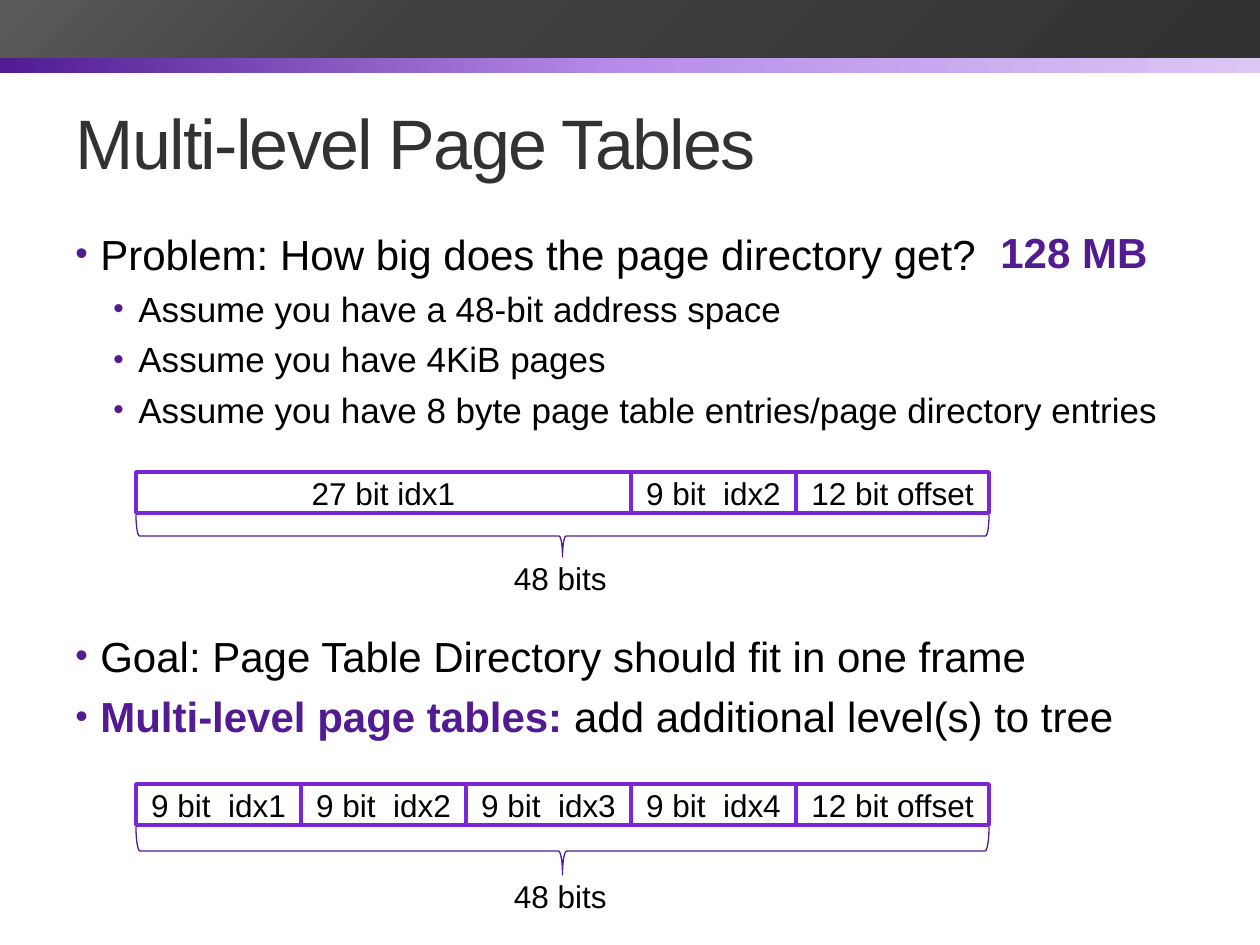
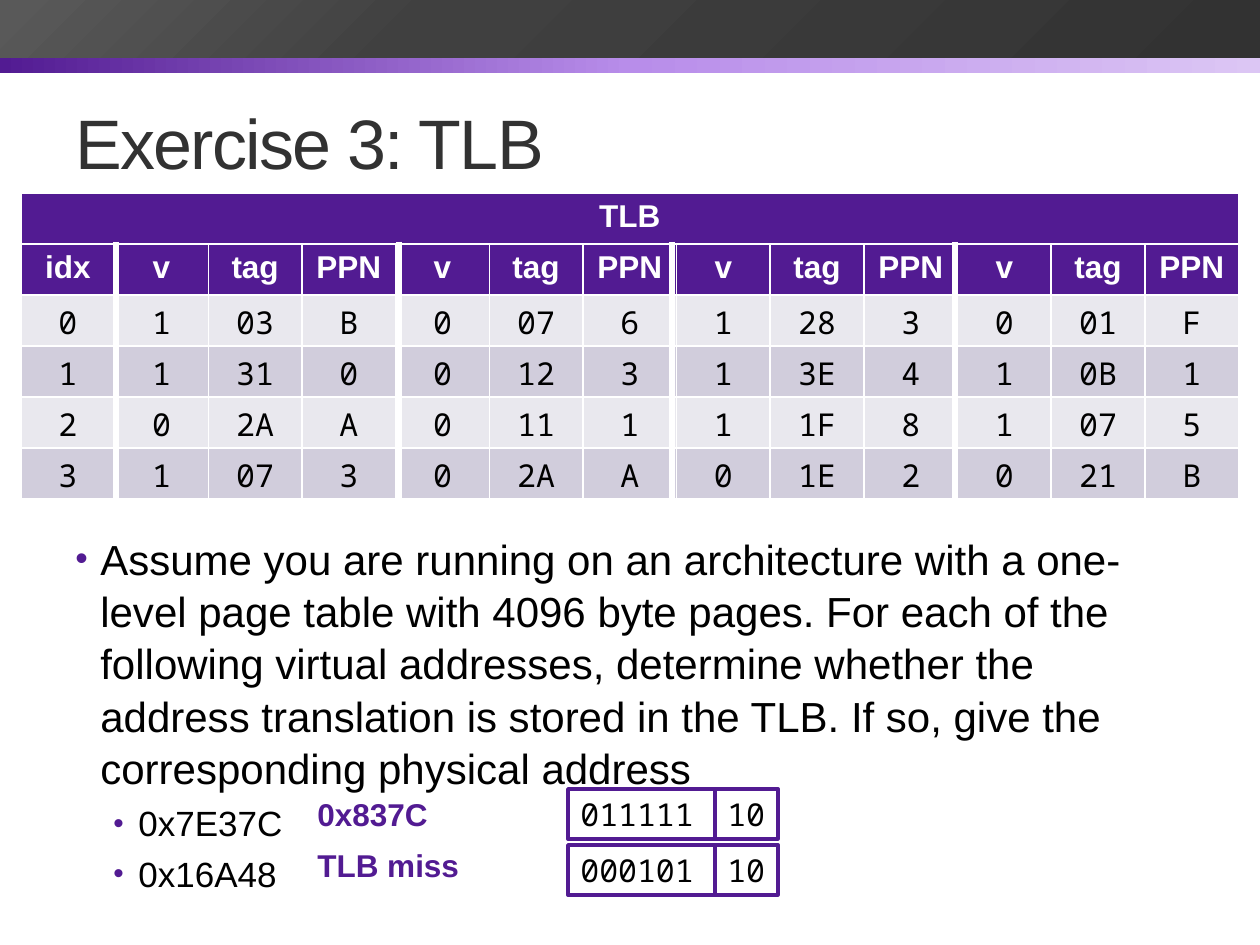
from lxml import etree
from pptx import Presentation
from pptx import util as u
from pptx.dml.color import RGBColor
from pptx.enum import shapes, text
from pptx.oxml import ns

SCALE = 914400 / 126  # EMU per px
FONT, MONO = "Arial", "Noto Sans Mono"
COLORS = {
    "purple": "521B92", "violet": "7A27D8", "title": "323232",
    "text": "000000", "white": "FFFFFF", "row_light": "E9E8EE", "row_dark": "D1CDDC",
}
PURPLE_BAND = [(0, "521B92"), (50, "B88DEA"), (100, "DCC6F4")]
GRAY_BAND = [(0, "323232"), (66, "404040"), (99, "595959")]
BIT_WIDTHS = {"27 bit": 495, "9 bit": 165, "12 bit": 193}
SIZES, INDENTS, HANG = (24, 20), (25, 63), 25  # by bullet level


def px(n):
    return u.Emu(round(n * SCALE))


def box_px(*values):
    return [px(v) for v in values]


def rgb(name):
    return RGBColor.from_string(COLORS[name])


def sub(parent, tag, **attrs):
    return etree.SubElement(parent, ns.qn(tag), attrs)


def style(r, size, color="text", bold=False, font=FONT):
    r.font.size, r.font.bold, r.font.name = u.Pt(size), bold, font
    r.font.color.rgb = rgb(color)


def add_shape(s, kind, box, fill=None, line=None, width=2.08):
    sp = s.shapes.add_shape(kind, *box_px(*box))
    sp.shadow.inherit = False
    if fill:
        sp.fill.solid()
        sp.fill.fore_color.rgb = rgb(fill)
    else:
        sp.fill.background()
    if line:
        sp.line.color.rgb = rgb(line)
        sp.line.width = u.Pt(width)
    else:
        sp.line.fill.background()
    return sp


def add_cell(s, label, box, line, align, font=FONT):
    """White outlined box with one line of text."""
    sp = add_shape(s, shapes.MSO_SHAPE.RECTANGLE, box, "white", line)
    tf = sp.text_frame
    tf.text = label
    tf.word_wrap = False
    tf.vertical_anchor = text.MSO_ANCHOR.MIDDLE
    p = tf.paragraphs[0]
    p.alignment = align
    style(p.runs[0], 18, font=font)


def add_label(s, label, box, size=18, color="text", bold=False):
    tf = s.shapes.add_textbox(*box_px(*box)).text_frame
    tf.text = label
    tf.word_wrap = False
    style(tf.paragraphs[0].runs[0], size, color, bold)


def add_band(s, box, stops, angle):
    sp = add_shape(s, shapes.MSO_SHAPE.RECTANGLE, box)
    pr = sp.fill._xPr
    grad = etree.Element(ns.qn("a:gradFill"), rotWithShape="1")
    stop_list = sub(grad, "a:gsLst")
    for pos, color in stops:
        stop = sub(stop_list, "a:gs", pos=str(pos * 1000))
        sub(stop, "a:srgbClr", val=color)
    sub(grad, "a:lin", ang=str(angle * 60000), scaled="0")
    pr.replace(pr.find(ns.qn("a:noFill")), grad)


def new_slide(prs, title):
    """Title-only slide with the two top bands."""
    s = prs.slides.add_slide(prs.slide_layouts[5])
    add_band(s, (0, 30, 1260, 43), PURPLE_BAND, 0)
    add_band(s, (0, 0, 1260, 58), GRAY_BAND, 225)
    sp = s.shapes.title
    sp.left, sp.top, sp.width, sp.height = box_px(63, 73, 1134, 136)
    tf = sp.text_frame
    tf.text = title
    tf.vertical_anchor = text.MSO_ANCHOR.MIDDLE
    p = tf.paragraphs[0]
    p.alignment = text.PP_ALIGN.LEFT
    style(p.runs[0], 40, "title")
    p.runs[0].font._element.set("spc", "-100")
    return s


def add_bullets(s, box, items):
    """Each item is (level, plain text) or (level, plain text, bold lead-in)."""
    tf = s.shapes.add_textbox(*box_px(*box)).text_frame
    tf.word_wrap = True
    for i, (level, plain, *lead) in enumerate(items):
        p = tf.paragraphs[0] if i == 0 else tf.add_paragraph()
        p.level = level
        p.line_spacing = 1.04
        p.space_before = u.Pt(SIZES[level] * 0.2)
        for part in lead + [plain]:
            r = p.add_run()
            r.text = part
            style(r, SIZES[level], "purple" if part in lead else "text", part in lead)
        pr = p._p.get_or_add_pPr()
        pr.set("marL", str(px(INDENTS[level])))
        pr.set("indent", str(-px(HANG)))
        sub(sub(pr, "a:buClr"), "a:srgbClr", val=COLORS["purple"])
        sub(pr, "a:buSzPct", val="85000")
        sub(pr, "a:buFont", typeface=FONT)
        sub(pr, "a:buChar", char="•")


def add_address(s, x, y, fields, brace_h):
    """Address split into bit fields, with a brace and its total below."""
    left, h = x, 41
    for field in fields:
        w = next(v for bits, v in BIT_WIDTHS.items() if field.startswith(bits))
        add_cell(s, field, (left, y, w, h), "violet", text.PP_ALIGN.CENTER)
        left += w
    total, top = left - x, y + h + 2
    # The brace is drawn upright, then turned about its centre
    cx, cy = x + total / 2, top + brace_h / 2
    brace = add_shape(s, shapes.MSO_SHAPE.LEFT_BRACE,
                      (cx - brace_h / 2, cy - total / 2, brace_h, total),
                      line="purple", width=0.75)
    brace.rotation = 270
    add_label(s, "48 bits", (cx - 61, top + brace_h - 4, 120, 50))


def add_tlb(s, x, y, w, row_h, rows):
    header = ["idx"] + ["v", "tag", "PPN"] * 4
    n = len(header)
    table = s.shapes.add_table(len(rows) + 2, n, *box_px(x, y, w, row_h * 6)).table
    for col in table.columns:
        col.width = px(w / n)
    for row in table.rows:
        row.height = px(row_h)
    table.cell(0, 0).merge(table.cell(0, n - 1))
    for i, values in enumerate([["TLB"] + [""] * (n - 1), header, *rows]):
        head = i < 2
        fill = "purple" if head else ("row_light", "row_dark")[i % 2]
        for j, value in enumerate(values):
            cell = table.cell(i, j)
            cell.fill.solid()
            cell.fill.fore_color.rgb = rgb(fill)
            if value:
                cell.text = value
                p = cell.text_frame.paragraphs[0]
                p.alignment = text.PP_ALIGN.CENTER
                style(p.runs[0], 18, "white" if head else "text", head,
                      FONT if head else MONO)
    # Thick rules between the index and the four ways
    for rule_x in (95, 378, 651, 934):
        line = s.shapes.add_connector(
            shapes.MSO_CONNECTOR.STRAIGHT,
            *box_px(x + rule_x, y + 49, x + rule_x, y + 306))
        line.line.color.rgb = rgb("white")
        line.line.width = u.Pt(3.5)
        sub(line._element.spPr, "a:effectLst")


def add_answers(s, x, y, answers):
    for i, (result, tag, index) in enumerate(answers):
        add_label(s, result, (x, y + 51 * i, 170, 50), color="purple", bold=True)
        top = y + 56 * i
        for left, w, bits in ((263, 147, tag), (410, 63, index)):
            add_cell(s, bits, (x + left, top, w, 50), "purple", text.PP_ALIGN.LEFT, MONO)


def page_tables_slide(prs):
    s = new_slide(prs, "Multi-level Page Tables")
    add_bullets(s, (63, 220, 1134, 220), [
        (0, "Problem: How big does the page directory get?"),
        (1, "Assume you have a 48-bit address space"),
        (1, "Assume you have 4KiB pages"),
        (1, "Assume you have 8 byte page table entries/page directory entries"),
    ])
    add_label(s, "128 MB", (988, 220, 174, 63), 24, "purple", True)
    add_address(s, 136, 472, ["27 bit idx1", "9 bit  idx2", "12 bit offset"], 42)
    add_bullets(s, (63, 622, 1134, 130), [
        (0, "Goal: Page Table Directory should fit in one frame"),
        (0, "add additional level(s) to tree", "Multi-level page tables: "),
    ])
    fields = [f"9 bit  idx{i}" for i in range(1, 5)] + ["12 bit offset"]
    add_address(s, 136, 784, fields, 48)


def tlb_slide(prs):
    s = new_slide(prs, "Exercise 3: TLB")
    add_bullets(s, (63, 525, 1134, 368), [
        (0, "Assume you are running on an architecture with a one-level page table "
            "with 4096 byte pages. For each of the following virtual addresses, "
            "determine whether the address translation is stored in the TLB. "
            "If so, give the corresponding physical address"),
        (1, "0x7E37C"),
        (1, "0x16A48"),
    ])
    add_tlb(s, 21, 193, 1218, 51, [line.split() for line in (
        "0 1 03 B 0 07 6 1 28 3 0 01 F",
        "1 1 31 0 0 12 3 1 3E 4 1 0B 1",
        "2 0 2A A 0 11 1 1 1F 8 1 07 5",
        "3 1 07 3 0 2A A 0 1E 2 0 21 B",
    )])
    add_answers(s, 305, 789, [("0x837C", "011111", "10"), ("TLB miss", "000101", "10")])


def main():
    prs = Presentation()
    prs.slide_width, prs.slide_height = px(1260), px(945)
    page_tables_slide(prs)
    tlb_slide(prs)
    prs.save("out.pptx")


if __name__ == "__main__":
    main()
